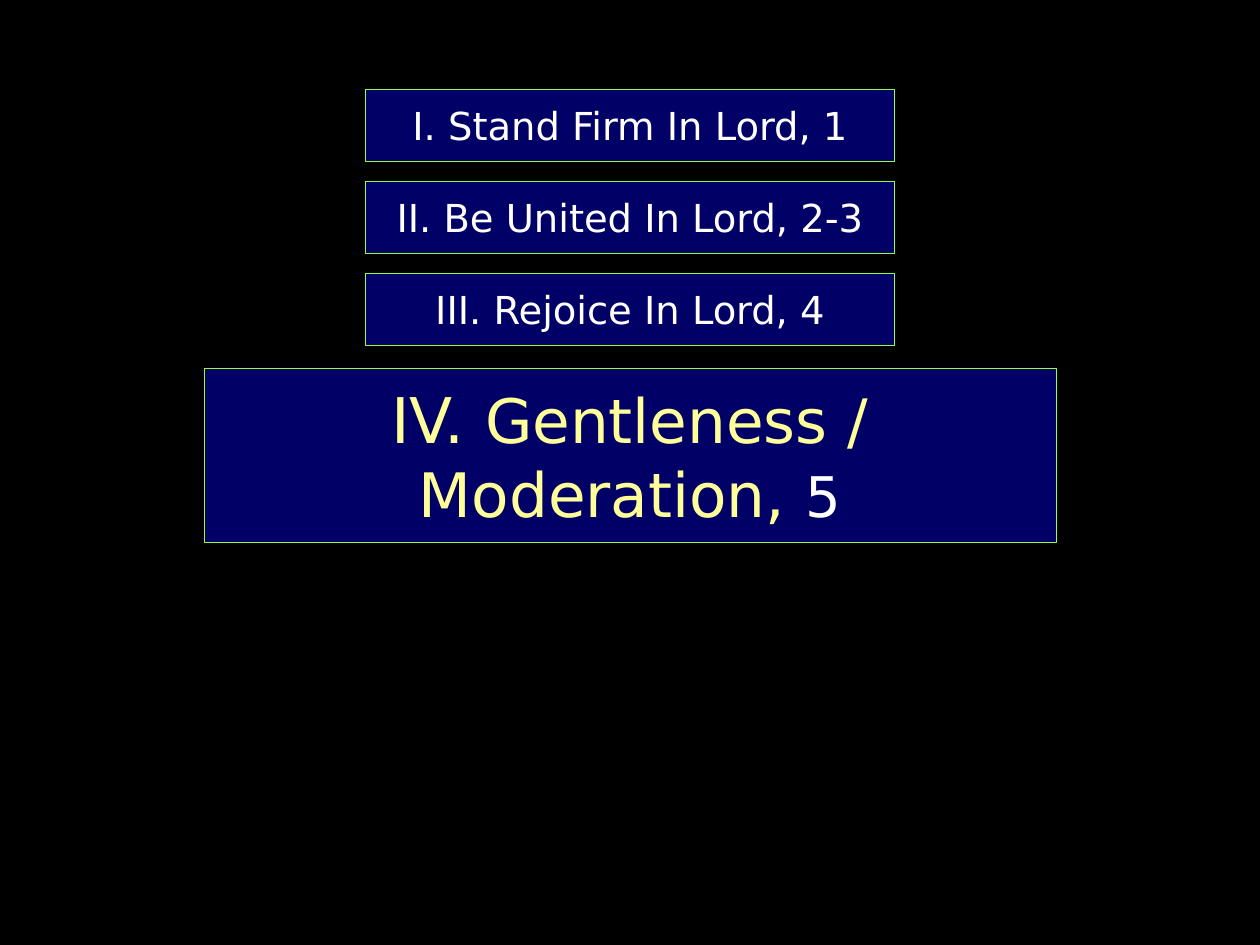
from dataclasses import dataclass

from pptx import Presentation
from pptx import util as u
from pptx.dml.color import RGBColor
from pptx.enum import shapes, text


@dataclass(frozen=True)
class Theme:
    font: str = "DejaVu Sans"
    backdrop: str = "000000"
    panel: str = "000066"
    outline: str = "99FF33"
    plain: str = "FFFFFF"
    accent: str = "FFFF99"
    outline_width: float = 0.25
    point_size: int = 22
    numeral_size: int = 36
    current_size: int = 35
    verse_size: int = 32


class OutlineSlide:
    def __init__(self, deck, theme):
        self.theme = theme
        self.width, self.height = deck.slide_width, deck.slide_height
        self.page = deck.slides.add_slide(deck.slide_layouts[6])
        backdrop = self.page.background.fill
        backdrop.solid()
        backdrop.fore_color.rgb = RGBColor.from_string(theme.backdrop)

    def add_panel(self, top, width, height, spans):
        """Add a centred panel; lengths are shares of the slide, spans are (words, size, colour)."""
        theme = self.theme
        box = self.page.shapes.add_shape(
            shapes.MSO_SHAPE.RECTANGLE,
            round(self.width * (1 - width) / 2), round(self.height * top),
            round(self.width * width), round(self.height * height))
        box.shadow.inherit = False
        box.fill.solid()
        box.fill.fore_color.rgb = RGBColor.from_string(theme.panel)
        box.line.color.rgb = RGBColor.from_string(theme.outline)
        box.line.width = u.Pt(theme.outline_width)

        frame = box.text_frame
        frame.word_wrap = True
        frame.vertical_anchor = text.MSO_ANCHOR.MIDDLE
        para = frame.paragraphs[0]
        para.alignment = text.PP_ALIGN.CENTER
        for words, size, colour in spans:
            span = para.add_run()
            span.text = words
            span.font.name = theme.font
            span.font.size = u.Pt(size)
            span.font.color.rgb = RGBColor.from_string(colour)


def main():
    deck = Presentation()
    deck.slide_width, deck.slide_height = u.Inches(10), u.Inches(7.5)
    theme = Theme()
    slide = OutlineSlide(deck, theme)

    first_top, row_step = 0.71 / 7.5, 0.73 / 7.5
    points = ["I. Stand Firm In Lord, 1", "II. Be United In Lord, 2-3", "III. Rejoice In Lord, 4"]
    for row, point in enumerate(points):
        slide.add_panel(first_top + row * row_step, 0.42, 0.57 / 7.5,
                        [(point, theme.point_size, theme.plain)])

    slide.add_panel(2.92 / 7.5, 0.676, 1.38 / 7.5, [
        ("IV. ", theme.numeral_size, theme.accent),
        ("Gentleness / Moderation, ", theme.current_size, theme.accent),
        ("5", theme.verse_size, theme.plain),
    ])
    deck.save("out.pptx")


if __name__ == "__main__":
    main()
